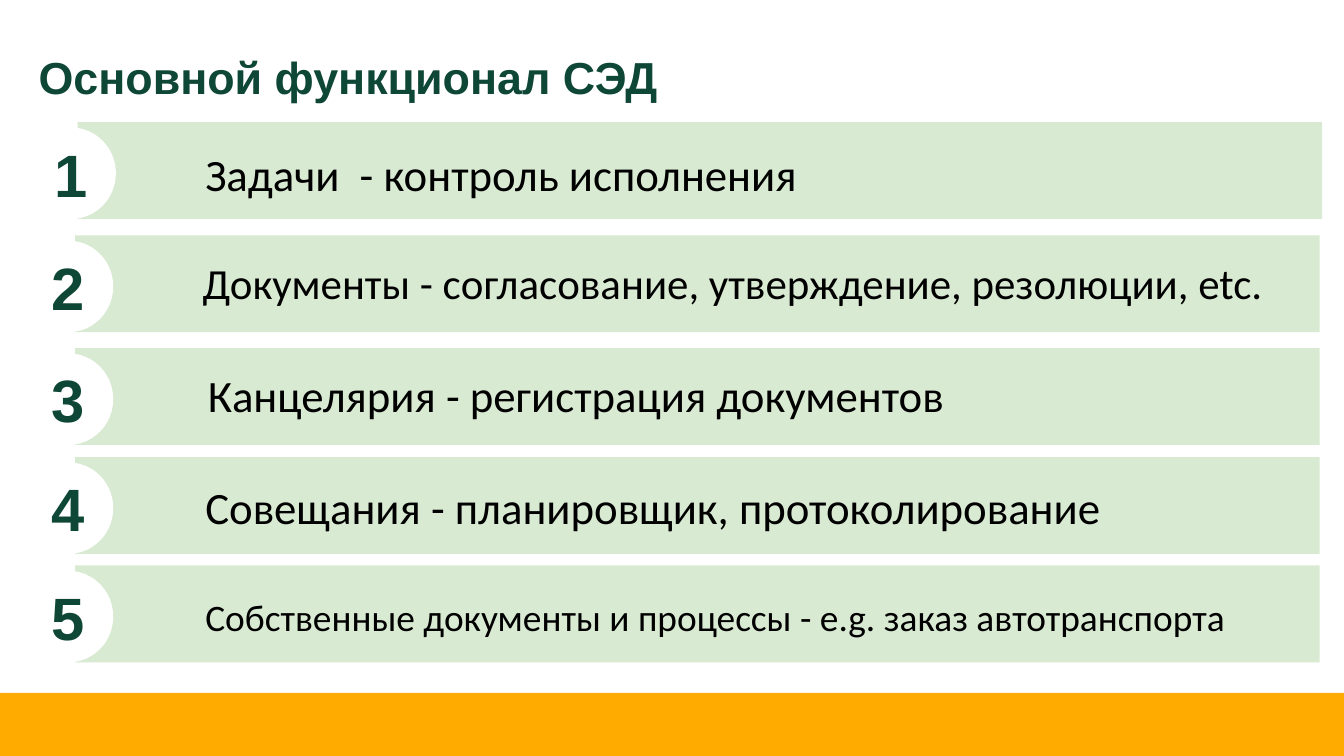
from pptx import Presentation
from pptx.dml.color import RGBColor
from pptx.enum.shapes import MSO_SHAPE
from pptx.enum.text import MSO_ANCHOR, PP_ALIGN
from pptx.util import Cm, Pt

TITLE = "Основной функционал СЭД"
# text, font size, bar left, bar top, label left, label top, label height (cm)
ROWS = [
    ("Задачи  - контроль исполнения", 24, 1.47, 2.31, 3.63, 2.64, 1.3),
    ("Документы - согласование, утверждение, резолюции, etc.", 23, 1.42, 4.45, 3.58, 4.72, 1.25),
    ("Канцелярия - регистрация документов", 24, 1.42, 6.58, 3.68, 6.83, 1.3),
    ("Совещания - планировщик, протоколирование", 24, 1.42, 8.64, 3.63, 8.94, 1.3),
    ("Собственные документы и процессы - e.g. заказ автотранспорта", 20, 1.42, 10.69, 3.63, 11.1, 1.12),
]
COLORS = {"dark": "0F4736", "bar": "D9EAD3", "footer": "FFAB00",
          "white": "FFFFFF", "text": "000000"}
BAR_W, BAR_H = 23.52, 1.83
LABEL_RIGHT = 24.74
CIRCLE_W, CIRCLE_H = 1.69, 1.73


def color(name):
    return RGBColor.from_string(COLORS[name])


def add_block(shapes, kind, x, y, w, h, fill):
    sp = shapes.add_shape(kind, Cm(x), Cm(y), Cm(w), Cm(h))
    sp.shadow.inherit = False
    sp.fill.solid()
    sp.fill.fore_color.rgb = color(fill)
    sp.line.fill.background()
    return sp


def write(sp, text, size, font, fill, bold=False,
          align=PP_ALIGN.LEFT, anchor=MSO_ANCHOR.TOP):
    tf = sp.text_frame
    tf.word_wrap = True
    tf.vertical_anchor = anchor
    p = tf.paragraphs[0]
    p.text = text
    p.alignment = align
    p.font.size = Pt(size)
    p.font.name = font
    p.font.bold = bold
    p.font.color.rgb = color(fill)


prs = Presentation()
prs.slide_width, prs.slide_height = Cm(25.4), Cm(14.29)
s = prs.slides.add_slide(prs.slide_layouts[6])

# Footer band and title
add_block(s.shapes, MSO_SHAPE.RECTANGLE, 0, 13.1, 25.4, 1.19, "footer")
title = s.shapes.add_textbox(Cm(0.48), Cm(0.81), Cm(24.26), Cm(1.27))
write(title, TITLE, 24, "Arial", "dark", bold=True)

# Numbered bars
for number, (text, size, x, y, label_x, label_y, label_h) in enumerate(ROWS, 1):
    row = s.shapes.add_group_shape()
    add_block(row.shapes, MSO_SHAPE.RECTANGLE, x, y, BAR_W, BAR_H, "bar")
    label = add_block(row.shapes, MSO_SHAPE.RECTANGLE, label_x, label_y,
                      LABEL_RIGHT - label_x, label_h, "bar")
    write(label, text, size, "Calibri", "text")

    circle = add_block(s.shapes, MSO_SHAPE.OVAL, x - 0.97, y + BAR_H - CIRCLE_H,
                       CIRCLE_W, CIRCLE_H, "white")
    write(circle, str(number), 32, "Arial", "dark", bold=True,
          align=PP_ALIGN.CENTER, anchor=MSO_ANCHOR.MIDDLE)

prs.save("out.pptx")
